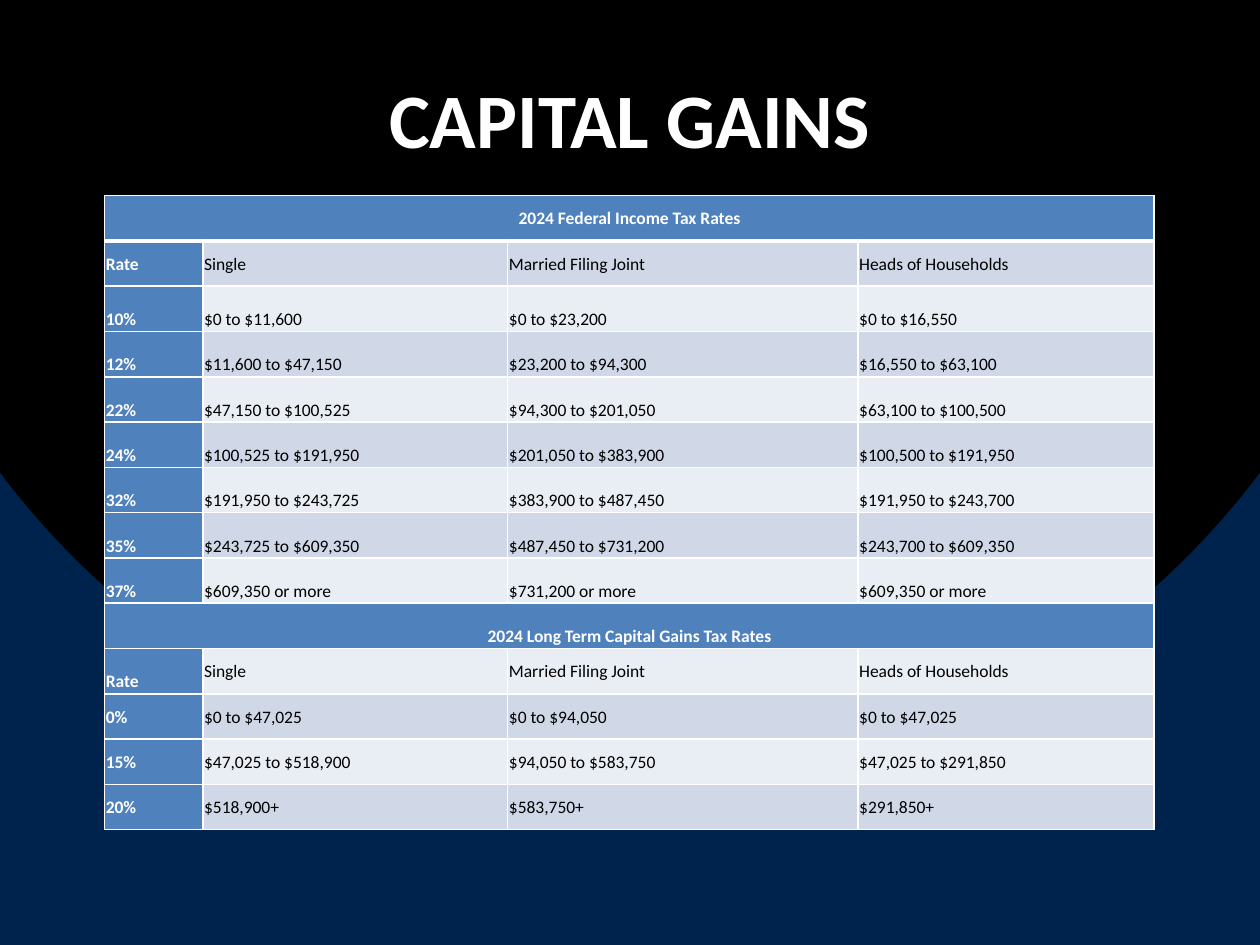
from dataclasses import dataclass

from pptx import Presentation
from pptx.dml.color import RGBColor
from pptx.enum.text import MSO_ANCHOR, PP_ALIGN
from pptx.oxml import parse_xml
from pptx.oxml.ns import nsdecls, qn
from pptx.util import Inches, Pt

MIDDLE, BOTTOM = MSO_ANCHOR.MIDDLE, MSO_ANCHOR.BOTTOM
CENTER, LEFT = PP_ALIGN.CENTER, PP_ALIGN.LEFT
TITLE_ONLY = 5


@dataclass(frozen=True)
class Theme:
    font: str = "Calibri"
    title_size: int = 44
    table_size: int = 10
    light: str = "FFFFFF"
    dark: str = "000000"
    header: str = "4F81BD"
    bands: tuple = ("E9EDF4", "D0D8E8")
    gradient: tuple = ("000000", "B5C0E0", "00234D")
    thin: int = 1
    thick: int = 3
    line_spacing: float = 1.07
    cell_margin: float = 0.01


THEME = Theme()
# Boxes are left, top, width, height as shares of the slide
TITLE_BOX = (0.05, 0.04, 0.9, 0.17)
TABLE_BOX = (0.083, 0.207, 0.833, 0.671)
COLUMN_WEIGHTS = (0.78, 2.42, 2.78, 2.35)

FILING_STATUSES = ("Rate", "Single", "Married Filing Joint", "Heads of Households")
INCOME_RATES = [
    ("10%", "$0 to $11,600", "$0 to $23,200", "$0 to $16,550"),
    ("12%", "$11,600 to $47,150", "$23,200 to $94,300", "$16,550 to $63,100"),
    ("22%", "$47,150 to $100,525", "$94,300 to $201,050", "$63,100 to $100,500"),
    ("24%", "$100,525 to $191,950", "$201,050 to $383,900", "$100,500 to $191,950"),
    ("32%", "$191,950 to $243,725", "$383,900 to $487,450", "$191,950 to $243,700"),
    ("35%", "$243,725 to $609,350", "$487,450 to $731,200", "$243,700 to $609,350"),
    ("37%", "$609,350 or more", "$731,200 or more", "$609,350 or more"),
]
GAINS_RATES = [
    ("0%", "$0 to $47,025", "$0 to $94,050", "$0 to $47,025"),
    ("15%", "$47,025 to $518,900", "$94,050 to $583,750", "$47,025 to $291,850"),
    ("20%", "$518,900+", "$583,750+", "$291,850+"),
]
# Each row: its texts, the anchor of its first cell, the anchor of the others
ROWS = [
    (("2024 Federal Income Tax Rates",), MIDDLE, MIDDLE),
    (FILING_STATUSES, MIDDLE, MIDDLE),
    *((rates, BOTTOM, BOTTOM) for rates in INCOME_RATES),
    (("2024 Long Term Capital Gains Tax Rates",), BOTTOM, BOTTOM),
    (FILING_STATUSES, BOTTOM, MIDDLE),
    *((rates, MIDDLE, MIDDLE) for rates in GAINS_RATES),
]


def scale_box(presentation, box):
    width, height = presentation.slide_width, presentation.slide_height
    return [round(share * size) for share, size in zip(box, (width, height) * 2)]


def format_text(paragraph, size, color, bold, alignment):
    paragraph.alignment = alignment
    for run in paragraph.runs:
        run.font.name = THEME.font
        run.font.size = Pt(size)
        run.font.bold = bold
        run.font.color.rgb = RGBColor.from_string(color)


def paint_background(slide):
    slide.background.fill.gradient()
    gradient = slide.element.find(".//" + qn("a:gradFill"))
    stops = "".join(
        f'<a:gs pos="100000"><a:srgbClr val="{color}"/></a:gs>' for color in THEME.gradient
    )
    circle = parse_xml(
        f'<a:gradFill {nsdecls("a")} rotWithShape="1"><a:gsLst>{stops}</a:gsLst>'
        '<a:path path="circle">'
        '<a:fillToRect l="50000" t="-80000" r="50000" b="180000"/>'
        "</a:path></a:gradFill>"
    )
    gradient.getparent().replace(gradient, circle)


def place_title(slide, box):
    title = slide.shapes.title
    title.left, title.top, title.width, title.height = box
    title.text_frame.text = "CAPITAL GAINS"
    title.text_frame.vertical_anchor = MIDDLE
    format_text(title.text_frame.paragraphs[0], THEME.title_size, THEME.light, True, CENTER)


def set_borders(cell, top, bottom):
    properties = cell._tc.get_or_add_tcPr()
    widths = {"lnL": THEME.thin, "lnR": THEME.thin, "lnT": top, "lnB": bottom}
    for position, (side, width) in enumerate(widths.items()):
        properties.insert(position, parse_xml(
            f'<a:{side} {nsdecls("a")} w="{Pt(width)}"><a:solidFill>'
            f'<a:srgbClr val="{THEME.light}"/></a:solidFill></a:{side}>'
        ))


def format_cell(cell, text, anchor, fill, is_header, alignment):
    margin = Inches(THEME.cell_margin)
    cell.margin_left = cell.margin_right = cell.margin_top = cell.margin_bottom = margin
    cell.vertical_anchor = anchor
    cell.fill.solid()
    cell.fill.fore_color.rgb = RGBColor.from_string(fill)
    paragraph = cell.text_frame.paragraphs[0]
    paragraph.text = text
    paragraph.line_spacing = THEME.line_spacing
    color = THEME.light if is_header else THEME.dark
    format_text(paragraph, THEME.table_size, color, is_header, alignment)


def place_rate_table(slide, box):
    column_count = len(COLUMN_WEIGHTS)
    table = slide.shapes.add_table(len(ROWS), column_count, *box).table
    table.first_row = table.horz_banding = False
    for column, weight in zip(table.columns, COLUMN_WEIGHTS):
        column.width = round(box[2] * weight / sum(COLUMN_WEIGHTS))
    for row in table.rows:
        row.height = round(box[3] / len(ROWS))

    for row_index, (texts, first_anchor, other_anchor) in enumerate(ROWS):
        is_section = len(texts) == 1
        if is_section:
            table.cell(row_index, 0).merge(table.cell(row_index, column_count - 1))
        top = THEME.thick if row_index == 1 else THEME.thin
        bottom = THEME.thick if row_index == 0 else THEME.thin
        for column_index in range(column_count):
            cell = table.cell(row_index, column_index)
            is_header = is_section or column_index == 0
            format_cell(
                cell,
                texts[column_index] if column_index < len(texts) else "",
                first_anchor if column_index == 0 else other_anchor,
                THEME.header if is_header else THEME.bands[row_index % 2],
                is_header,
                CENTER if is_section else LEFT,
            )
            set_borders(cell, top, bottom)


def main():
    presentation = Presentation()
    presentation.slide_width, presentation.slide_height = Inches(10), Inches(7.5)
    slide = presentation.slides.add_slide(presentation.slide_layouts[TITLE_ONLY])
    paint_background(slide)
    place_title(slide, scale_box(presentation, TITLE_BOX))
    place_rate_table(slide, scale_box(presentation, TABLE_BOX))
    presentation.save("out.pptx")


if __name__ == "__main__":
    main()
